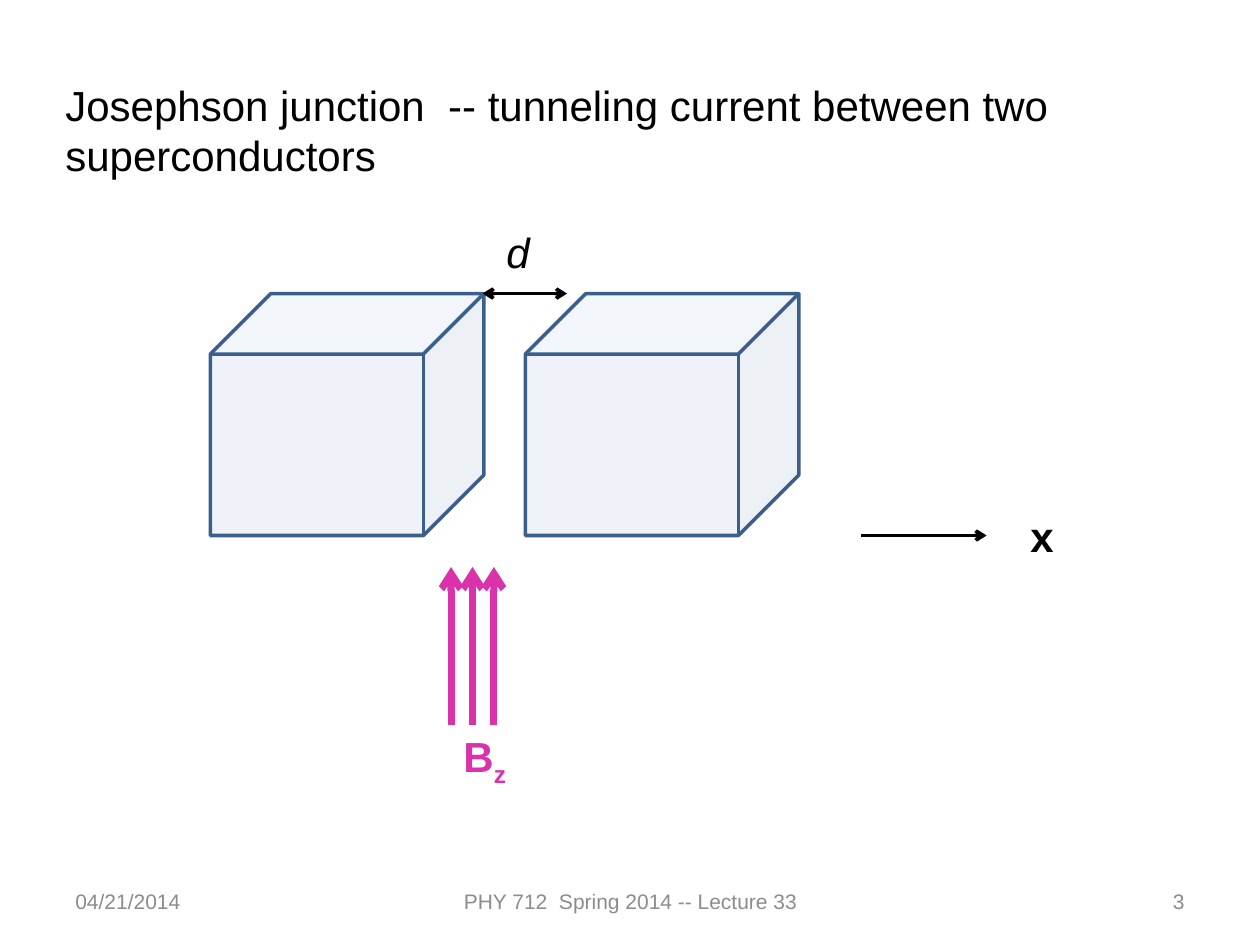
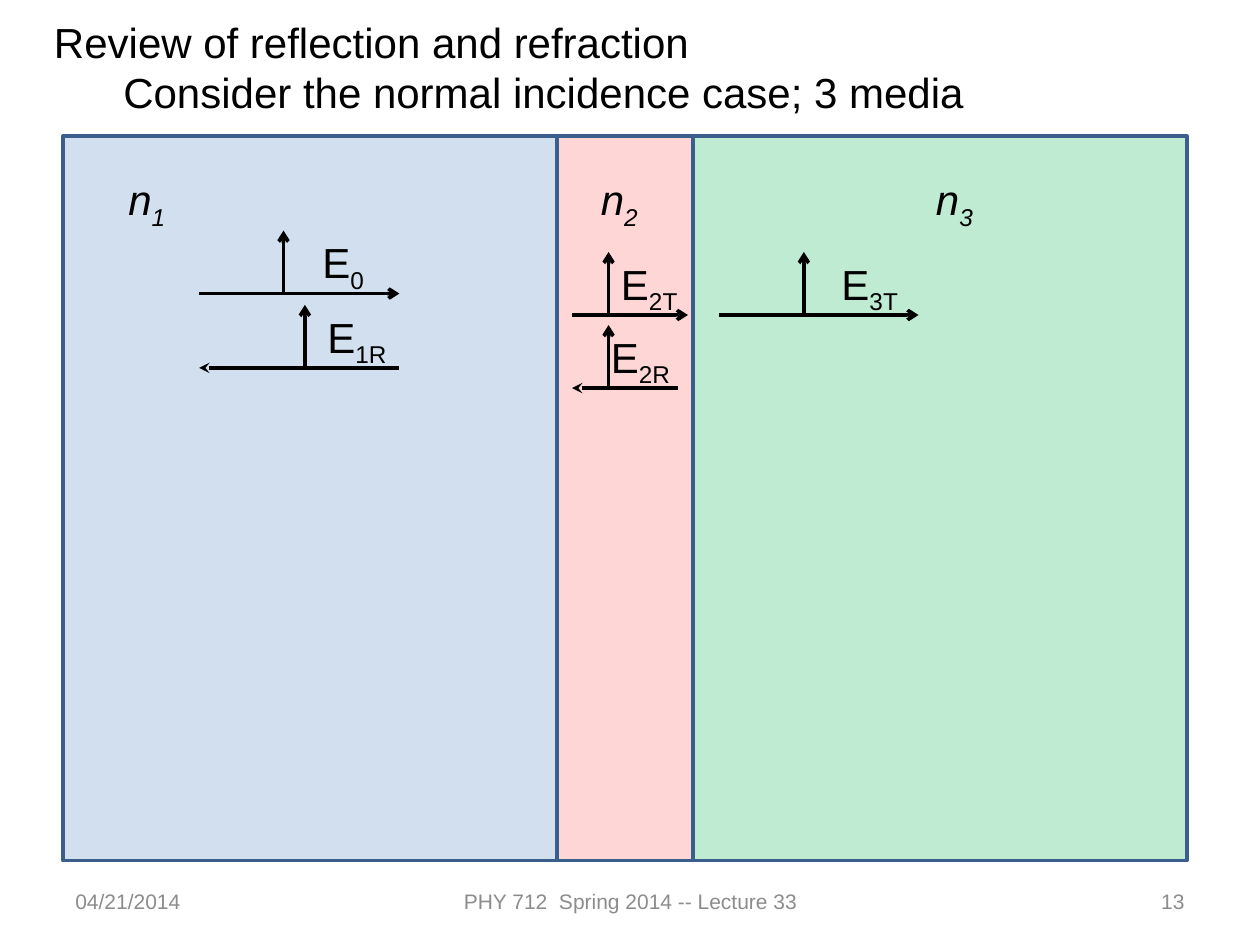
from lxml import etree
from pptx import Presentation
from pptx import util as u
from pptx.dml.color import RGBColor
from pptx.enum import shapes, text
from pptx.oxml import ns

COLORS = {"black": "000000", "footer": "8C8C8C", "edge": "3A5F8C", "blue": "4F81BD",
          "red": "FF0000", "green": "00B050", "field": "DA32AA"}
FONT = "Arial"


def add_text(s, box, content, sub="", size=24, color="black", bold=False, italic=False,
             align=text.PP_ALIGN.LEFT, anchor=text.MSO_ANCHOR.TOP):
    sp = s.shapes.add_textbox(*map(u.Inches, box))
    tf = sp.text_frame
    tf.text = content
    tf.word_wrap = True
    tf.vertical_anchor = anchor
    if size == 24:
        tf.auto_size = text.MSO_AUTO_SIZE.SHAPE_TO_FIT_TEXT
    if sub:
        r = tf.paragraphs[0].add_run()
        r.text = sub
        r.font._element.set("baseline", "-25000")
    for p in tf.paragraphs:
        p.alignment = align
        for r in p.runs:
            r.font.name = FONT
            r.font.size = u.Pt(size)
            r.font.bold = bold
            r.font.italic = italic
            r.font.color.rgb = RGBColor.from_string(COLORS[color])
    return tf


def add_arrow(s, x1, y1, x2, y2, color="black", width=2, head=None, tail="arrow"):
    cx = s.shapes.add_connector(shapes.MSO_CONNECTOR.STRAIGHT, *map(u.Inches, (x1, y1, x2, y2)))
    cx.line.color.rgb = RGBColor.from_string(COLORS[color])
    cx.line.width = u.Pt(width)
    ln = cx.line._get_or_add_ln()
    for tag, kind in (("a:headEnd", head), ("a:tailEnd", tail)):
        if kind:
            etree.SubElement(ln, ns.qn(tag)).set("type", kind)
    etree.SubElement(cx._element.spPr, ns.qn("a:effectLst"))


prs = Presentation()
prs.slide_width, prs.slide_height = u.Inches(10), u.Inches(7.5)

CUBE, RECT = shapes.MSO_SHAPE.CUBE, shapes.MSO_SHAPE.RECTANGLE
pages = [
    ("3", (0.42, 0.58, 8.75, 0.91),
     "Josephson junction  -- tunneling current between two superconductors",
     [(CUBE, 1.67, 2.33, 2.17, 1.92, "blue", 9),
      (CUBE, 4.17, 2.33, 2.17, 1.92, "blue", 9)]),
    ("13", (0.33, 0.08, 8.92, 0.91),
     "Review of reflection and refraction\nConsider the normal incidence case; 3 media",
     [(RECT, 0.5, 1.08, 3.92, 5.75, "blue", 25),
      (RECT, 4.42, 1.08, 1.08, 5.75, "red", 16),
      (RECT, 5.5, 1.08, 3.92, 5.75, "green", 25)]),
]

slides = []
for number, title_box, title, blocks in pages:
    s = prs.slides.add_slide(prs.slide_layouts[6])
    slides.append(s)
    for left, width, content, align in (
            (0.5, 2.33, "04/21/2014", text.PP_ALIGN.LEFT),
            (3.42, 3.17, "PHY 712  Spring 2014 -- Lecture 33", text.PP_ALIGN.CENTER),
            (7.17, 2.33, number, text.PP_ALIGN.RIGHT)):
        add_text(s, (left, 6.95, width, 0.4), content, size=12, color="footer",
                 align=align, anchor=text.MSO_ANCHOR.MIDDLE)
    tf = add_text(s, title_box, title)
    for p in tf.paragraphs[1:]:
        p._p.get_or_add_pPr().set("marL", str(u.Inches(0.55)))
    for kind, x, y, w, h, color, opacity in blocks:
        sp = s.shapes.add_shape(kind, *map(u.Inches, (x, y, w, h)))
        sp.shadow.inherit = False
        sp.fill.solid()
        sp.fill.fore_color.rgb = RGBColor.from_string(COLORS[color])
        clr = sp._element.spPr.find(".//" + ns.qn("a:srgbClr"))
        etree.SubElement(clr, ns.qn("a:alpha")).set("val", str(opacity * 1000))
        sp.line.color.rgb = RGBColor.from_string(COLORS["edge"])
        sp.line.width = u.Pt(2)

junction, media = slides

add_arrow(junction, 3.83, 2.33, 4.5, 2.33, head="arrow")
add_text(junction, (3.92, 1.75, 0.58, 0.5), "d", italic=True)
for x in (3.58, 3.75, 3.92):
    add_arrow(junction, x, 5.75, x, 4.5, color="field", width=4)
add_text(junction, (3.58, 5.75, 1.21, 0.5), "B", "z", color="field", bold=True)
add_arrow(junction, 6.83, 4.25, 7.83, 4.25)
add_text(junction, (8.08, 4, 0.42, 0.5), "x", bold=True)

for sub, x in (("1", 0.92), ("2", 4.67), ("3", 7.33)):
    add_text(media, (x, 1.33, 0.67, 0.5), "n", sub, italic=True)

waves = [("0", 1.58, 3.17, 2.33, 2.25, 2.46),
         ("1R", 1.58, 3.17, 2.92, 2.42, 2.5),
         ("2T", 4.54, 5.46, 2.5, 4.83, 4.83),
         ("2R", 4.54, 5.38, 3.08, 4.83, 4.75),
         ("3T", 5.71, 7.29, 2.5, 6.38, 6.58)]
for sub, x1, x2, y, stem, label in waves:
    if sub.endswith("R"):
        add_arrow(media, x1, y, x2, y, head="stealth", tail=None)
    else:
        add_arrow(media, x1, y, x2, y)
    add_arrow(media, stem, y, stem, y - 0.5)
    add_text(media, (label, y - 0.5, 0.71, 0.5), "E", sub)

prs.save("out.pptx")
